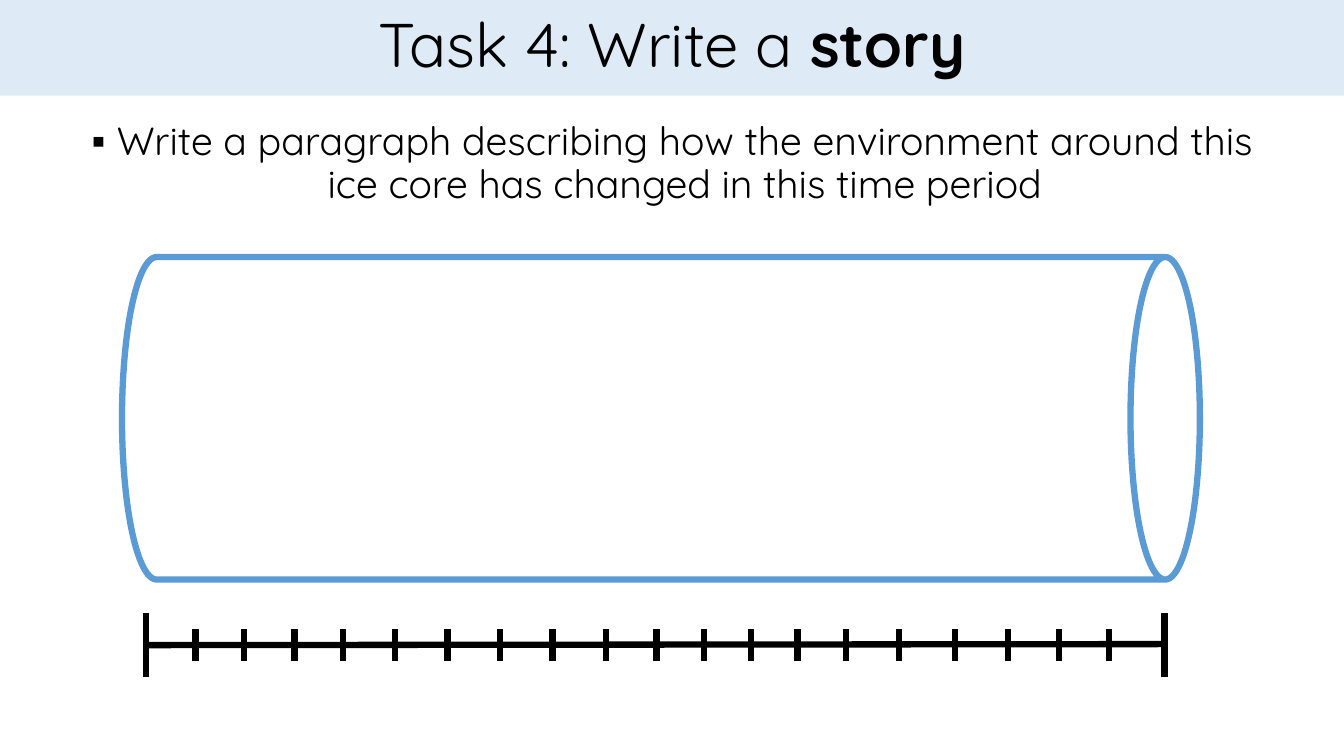
from lxml import etree
from pptx import Presentation
from pptx import util as u
from pptx.dml.color import RGBColor
from pptx.enum import shapes, text
from pptx.oxml import ns

PX = 9144
FONT = "Quicksand"
BLACK, WHITE, PALE_BLUE, ICE_BLUE = "000000", "FFFFFF", "DEEBF7", "5B9BD5"
TICK_OFFSETS = [49, 97, 147, 195, 247, 299, 351, 403, 456,
                506, 553, 600, 646, 694, 747, 802, 855, 905, 955]


def px(*lengths):
    """Turn pixel lengths into EMU."""
    return [u.Emu(int(length * PX)) for length in lengths]


def color(value):
    """Turn a hex string into a colour."""
    return RGBColor.from_string(value)


def style_paragraph(para, size):
    """Centre a paragraph and set the font of its runs."""
    para.alignment = text.PP_ALIGN.CENTER
    para.line_spacing = 0.9
    for span in para.runs:
        span.font.name = FONT
        span.font.size = u.Pt(size)
        span.font.color.rgb = color(BLACK)


def add_line(group, x1, y1, x2, y2):
    """Add a thick black line without a shadow."""
    line = group.shapes.add_connector(
        shapes.MSO_CONNECTOR.STRAIGHT, *px(x1, y1, x2, y2))
    line.line.color.rgb = color(BLACK)
    line.line.width = u.Pt(4.5)
    etree.SubElement(line._element.spPr, ns.qn("a:effectLst"))


def add_title(page, left, top, width, height):
    """Draw the title band."""
    band = page.shapes.add_shape(
        shapes.MSO_SHAPE.RECTANGLE, *px(left, top, width, height))
    band.shadow.inherit = False
    band.fill.solid()
    band.fill.fore_color.rgb = color(PALE_BLUE)
    band.line.fill.background()
    band.text_frame.word_wrap = True
    band.text_frame.vertical_anchor = text.MSO_ANCHOR.MIDDLE
    para = band.text_frame.paragraphs[0]
    para.text = "Task 4: Write a "
    story = para.add_run()
    story.text = "story"
    story.font.bold = True
    style_paragraph(para, 44)


def add_instruction(page, left, top, width, height):
    """Write the bulleted task instruction."""
    box = page.shapes.add_textbox(*px(left, top, width, height))
    box.text_frame.word_wrap = True
    para = box.text_frame.paragraphs[0]
    para.text = ("Write a paragraph describing how the environment around "
                 "this ice core has changed in this time period")
    style_paragraph(para, 28)
    para.space_before = u.Pt(10)
    props = para._p.get_or_add_pPr()
    indent = px(25)[0]
    props.set("marL", str(indent))
    props.set("indent", str(-indent))
    etree.SubElement(props, ns.qn("a:buFont"), typeface="Arial")
    etree.SubElement(props, ns.qn("a:buChar"), char="▪")


def add_ice_core(page, left, top, width, height):
    """Lay a cylinder on its side so that it fills the given box."""
    shift = (width - height) / 2
    core = page.shapes.add_shape(
        shapes.MSO_SHAPE.CAN, *px(left + shift, top - shift, height, width))
    core.rotation = 90
    core.adjustments[0] = 0.215
    core.shadow.inherit = False
    core.fill.solid()
    core.fill.fore_color.rgb = color(WHITE)
    core.line.color.rgb = color(ICE_BLUE)
    core.line.width = u.Pt(4.5)


def add_timeline(page, left, top, width, height):
    """Draw the axis with tall ends and half-height ticks."""
    timeline = page.shapes.add_group_shape()
    middle = top + height // 2
    add_line(timeline, left, middle, left + width, middle - 1)
    for x in (left, left + width):
        add_line(timeline, x, top + height, x, top)
    for offset in TICK_OFFSETS:
        x = left + offset
        add_line(timeline, x, middle + height // 4, x, middle - height // 4)


def main():
    """Build and save the slide."""
    deck = Presentation()
    deck.slide_width, deck.slide_height = px(1333, 750)
    page = deck.slides.add_slide(deck.slide_layouts[6])
    add_title(page, 0, 0, 1333, 95)
    add_instruction(page, 72, 116, 1189, 476)
    add_ice_core(page, 121, 255, 1069, 320)
    add_timeline(page, 145, 608, 1010, 64)
    deck.save("out.pptx")


if __name__ == "__main__":
    main()
